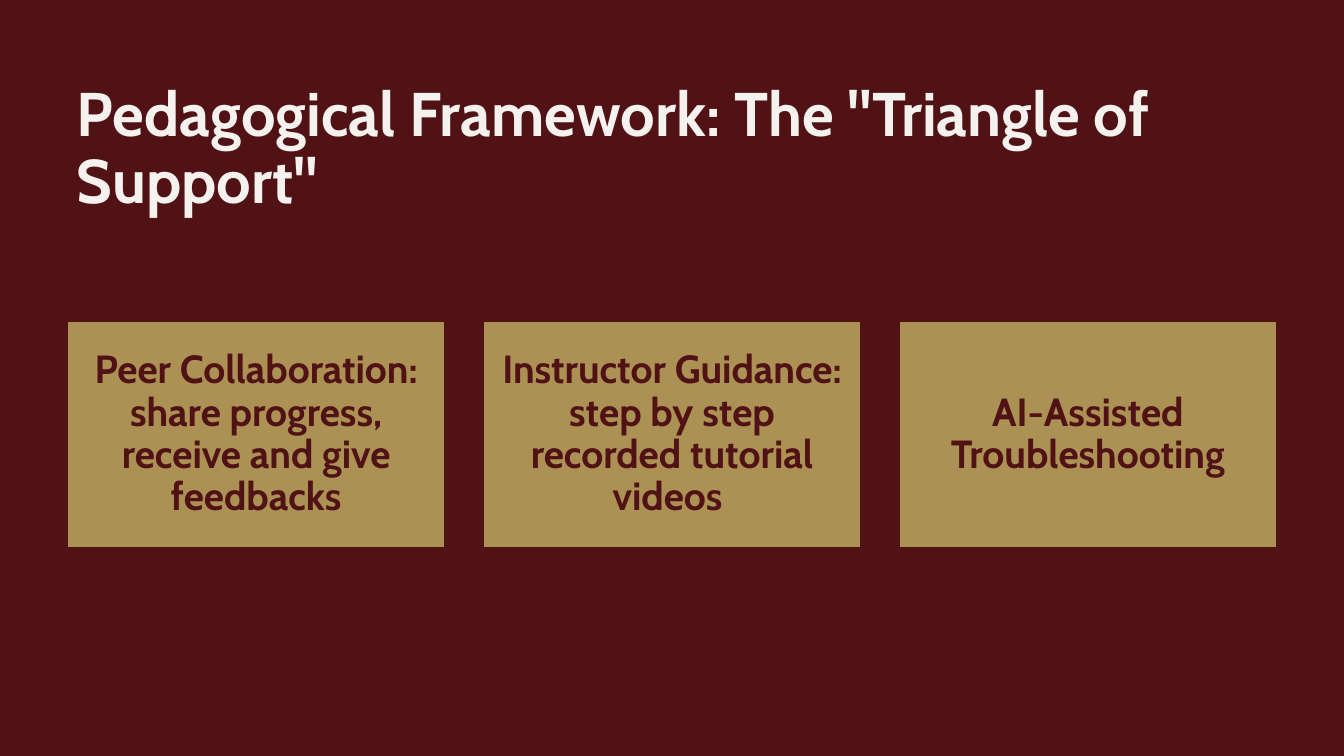
from pptx import Presentation
from pptx.dml.color import RGBColor
from pptx.enum.shapes import MSO_SHAPE
from pptx.enum.text import MSO_ANCHOR, PP_ALIGN
from pptx.util import Cm, Pt

COLORS = {"maroon": "501214", "gold": "AC9155", "cream": "F5F1EE"}
SUPPORTS = [
    "Peer Collaboration: share progress, receive and give feedbacks",
    "Instructor Guidance: step by step recorded tutorial videos ",
    "AI-Assisted Troubleshooting",
]
LEFT, CARD_TOP = 1.69, 8.09
CARD_WIDTH, CARD_HEIGHT, CARD_PITCH = 9.53, 5.72, 10.48


class SupportSlide:
    """Holds the style and the current slide, and draws its elements."""

    def __init__(self, slide, font="Cabin"):
        self.slide = slide
        self.font = font
        self.paint(slide.background.fill, "maroon")

    def paint(self, fill, color):
        fill.solid()
        fill.fore_color.rgb = RGBColor.from_string(COLORS[color])

    def add_words(self, frame, words, size, color, anchor, align):
        frame.word_wrap = True
        frame.vertical_anchor = anchor
        paragraph = frame.paragraphs[0]
        paragraph.alignment = align
        paragraph.line_spacing = 0.9
        run = paragraph.add_run()
        run.text = words
        run.font.name = self.font
        run.font.size = Pt(size)
        run.font.bold = True
        run.font.color.rgb = RGBColor.from_string(COLORS[color])

    def heading(self, words):
        heading = self.slide.shapes.add_textbox(Cm(LEFT), Cm(1.9), Cm(30.48), Cm(3.68))
        self.add_words(heading.text_frame, words, 44, "cream", MSO_ANCHOR.BOTTOM, PP_ALIGN.LEFT)

    def card(self, left, words):
        card = self.slide.shapes.add_shape(
            MSO_SHAPE.RECTANGLE, Cm(left), Cm(CARD_TOP), Cm(CARD_WIDTH), Cm(CARD_HEIGHT)
        )
        card.shadow.inherit = False
        self.paint(card.fill, "gold")
        self.paint(card.line.fill, "maroon")
        card.line.width = Pt(1.5)
        frame = card.text_frame
        frame.margin_left = frame.margin_right = Cm(0.3)
        frame.margin_top = frame.margin_bottom = Cm(0.3)
        self.add_words(frame, words, 28, "maroon", MSO_ANCHOR.MIDDLE, PP_ALIGN.CENTER)


def main():
    deck = Presentation()
    deck.slide_width, deck.slide_height = Cm(33.87), Cm(19.05)
    framework = SupportSlide(deck.slides.add_slide(deck.slide_layouts[6]))
    framework.heading('Pedagogical Framework: The "Triangle of Support"')
    for column, support in enumerate(SUPPORTS):
        framework.card(LEFT + column * CARD_PITCH, support)
    deck.save("out.pptx")


if __name__ == "__main__":
    main()
